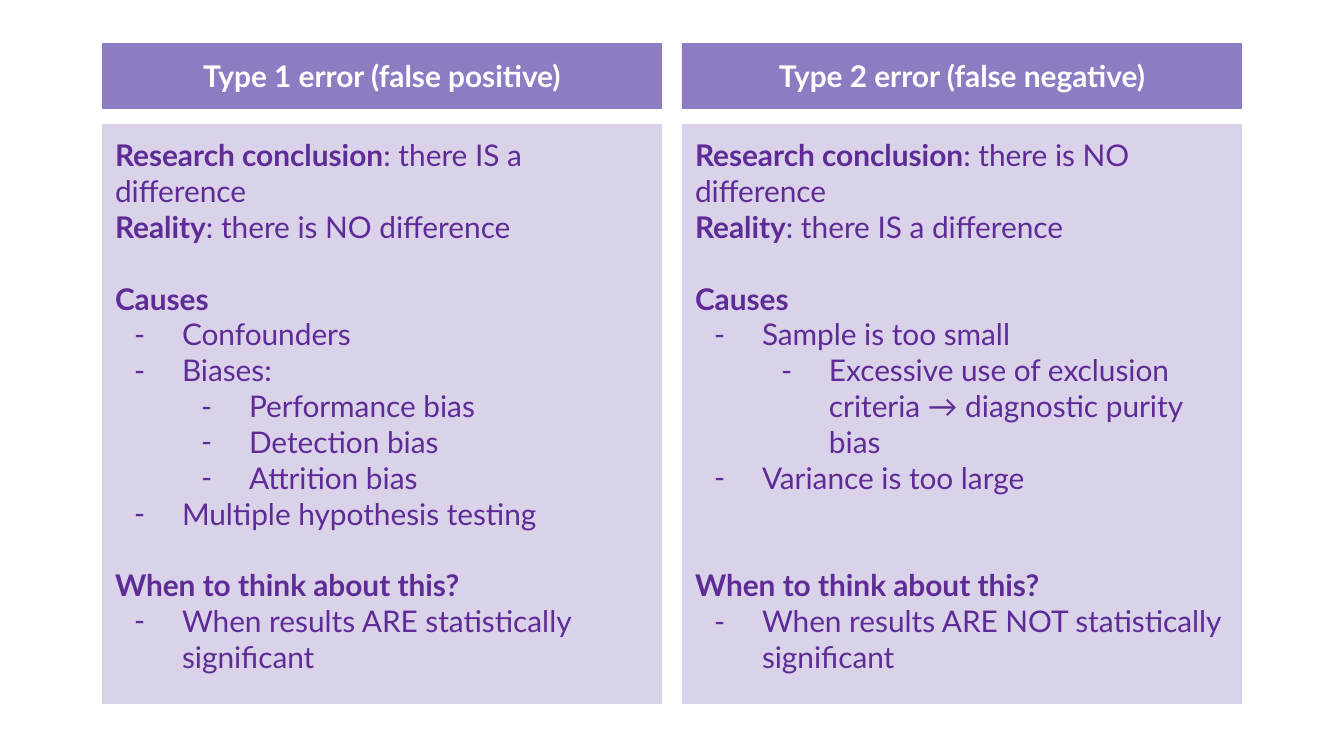
from lxml import etree
from pptx import Presentation
from pptx import util as u
from pptx.dml.color import RGBColor
from pptx.enum import shapes, text
from pptx.oxml.ns import qn

WHITE = RGBColor(0xFF, 0xFF, 0xFF)
HEAD = RGBColor(0x8E, 0x7C, 0xC3)
PANEL = RGBColor(0xD9, 0xD2, 0xE9)
INK = RGBColor(0x5E, 0x2B, 0x97)
FONT, SIZE, LINE = "Lato", 16, 19.2  # points

# Each row: bullet level, bold text, regular text, lines of space above
COLUMNS = [
    ("Type 1 error (false positive)", [
        (0, "Research conclusion", ": there IS a difference", 0),
        (0, "Reality", ": there is NO difference", 0),
        (0, "Causes", "", 1),
        (1, "", "Confounders", 0),
        (1, "", "Biases:", 0),
        (2, "", "Performance bias", 0),
        (2, "", "Detection bias", 0),
        (2, "", "Attrition bias", 0),
        (1, "", "Multiple hypothesis testing", 0),
        (0, "When to think about this?", "", 1),
        (1, "", "When results ARE statistically significant", 0),
    ]),
    ("Type 2 error (false negative)", [
        (0, "Research conclusion", ": there is NO difference", 0),
        (0, "Reality", ": there IS a difference", 0),
        (0, "Causes", "", 1),
        (1, "", "Sample is too small", 0),
        (2, "", "Excessive use of exclusion criteria → diagnostic purity bias", 0),
        (1, "", "Variance is too large", 0),
        (0, "When to think about this?", "", 2),
        (1, "", "When results ARE NOT statistically significant", 0),
    ]),
]

# Layout in px
WIDE, HIGH = 1344, 756
LEFT, COL, GAP = 102, 560, 20
HEAD_TOP, HEAD_H = 43, 66
BODY_TOP, BODY_H = 124, 580
INSET, STEP, HANG = 13, 67, 48


def px(n):
    return u.Emu(round(n * 914400 / 134.4))


def add_box(slide, x, y, w, h, fill, anchor):
    box = slide.shapes.add_shape(
        shapes.MSO_SHAPE.RECTANGLE, px(x), px(y), px(w), px(h))
    box.shadow.inherit = False
    box.fill.solid()
    box.fill.fore_color.rgb = fill
    box.line.fill.background()
    frame = box.text_frame
    frame.word_wrap = True
    frame.vertical_anchor = anchor
    frame.margin_left = frame.margin_right = px(INSET)
    frame.margin_top = frame.margin_bottom = px(INSET)
    return frame


def add_run(para, words, color, bold):
    run = para.add_run()
    run.text = words
    font = run.font
    font.name, font.size, font.bold = FONT, u.Pt(SIZE), bold
    font.color.rgb = color


def add_dash(para, level):
    props = para._p.get_or_add_pPr()
    props.set("marL", str(px(STEP * level)))
    props.set("indent", str(-px(HANG)))
    tint = etree.SubElement(props, qn("a:buClr"))
    etree.SubElement(tint, qn("a:srgbClr"), val=str(INK))
    etree.SubElement(props, qn("a:buFont"), typeface=FONT)
    etree.SubElement(props, qn("a:buChar"), char="-")


def main():
    deck = Presentation()
    deck.slide_width, deck.slide_height = px(WIDE), px(HIGH)
    slide = deck.slides.add_slide(deck.slide_layouts[6])

    for col, (title, rows) in enumerate(COLUMNS):
        x = LEFT + col * (COL + GAP)

        # Header bar
        frame = add_box(slide, x, HEAD_TOP, COL, HEAD_H, HEAD,
                        text.MSO_ANCHOR.MIDDLE)
        para = frame.paragraphs[0]
        para.alignment = text.PP_ALIGN.CENTER
        add_run(para, title, WHITE, True)

        # Body panel
        frame = add_box(slide, x, BODY_TOP, COL, BODY_H, PANEL,
                        text.MSO_ANCHOR.TOP)
        for i, (level, strong, plain, lines) in enumerate(rows):
            para = frame.add_paragraph() if i else frame.paragraphs[0]
            para.alignment = text.PP_ALIGN.LEFT
            para.space_before = u.Pt(lines * LINE)
            if level:
                para.level = level - 1
                add_dash(para, level)
            for words, bold in ((strong, True), (plain, False)):
                if words:
                    add_run(para, words, INK, bold)

    deck.save("out.pptx")


if __name__ == "__main__":
    main()
